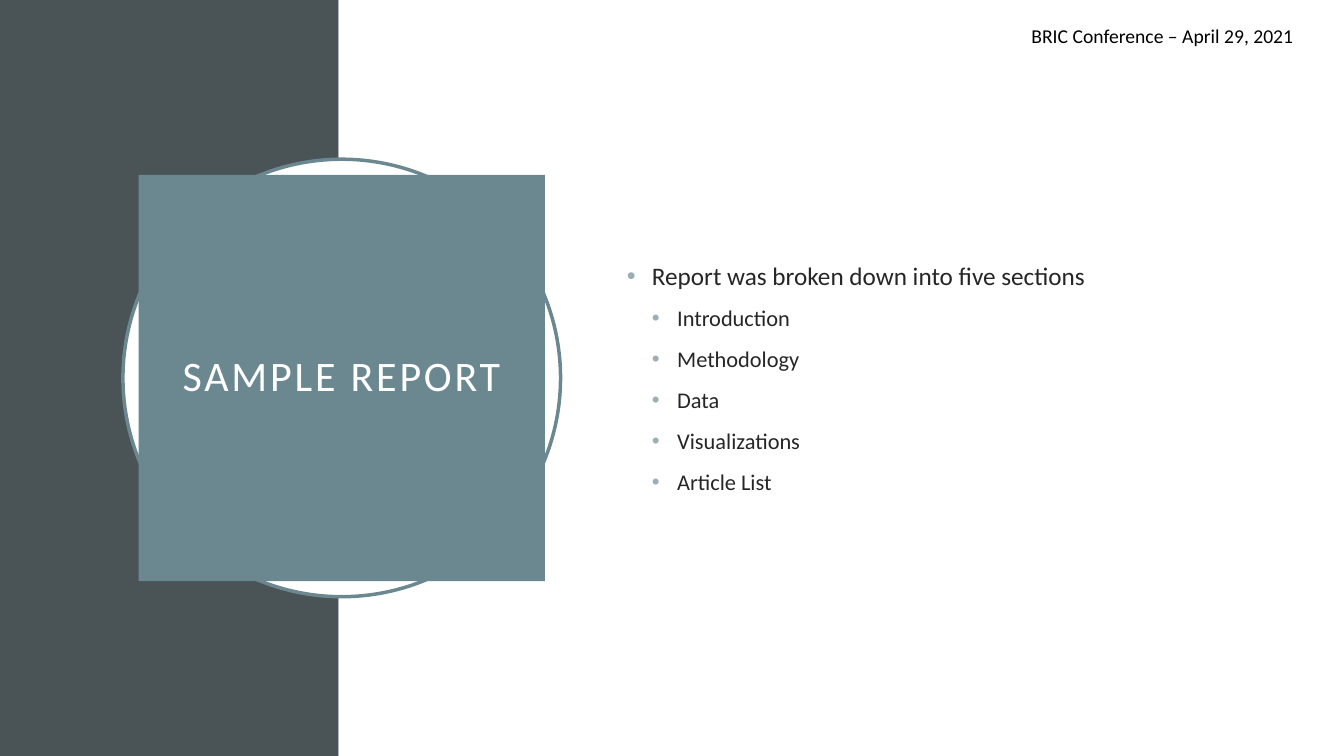
import pptx
import pptx.dml.color
import pptx.enum.shapes
import pptx.enum.text
import pptx.oxml
import pptx.oxml.ns
import pptx.util

RGBColor = pptx.dml.color.RGBColor
Shape = pptx.enum.shapes.MSO_SHAPE
Align = pptx.enum.text.PP_ALIGN
Anchor = pptx.enum.text.MSO_ANCHOR
Inches = pptx.util.Inches
Pt = pptx.util.Pt

CHARCOAL = RGBColor(0x4A, 0x53, 0x56)
TEAL = RGBColor(0x6B, 0x88, 0x91)
WHITE = RGBColor(0xFF, 0xFF, 0xFF)
BLACK = RGBColor(0x00, 0x00, 0x00)
INK = RGBColor(0x26, 0x26, 0x26)
BULLET = RGBColor(0x9B, 0xAF, 0xB5)

FONT = "Calibri"
WIDTH, HEIGHT = Inches(13.33), Inches(7.5)
PANEL_SHARE = 25.2  # dark panel, percent of the slide's width
SECTIONS = ["Introduction", "Methodology", "Data", "Visualizations", "Article List"]


def across(percent):
    return int(WIDTH * percent / 100)


def down(percent):
    return int(HEIGHT * percent / 100)


def area(left, top, width, height):
    """Turn percentages of the slide into a position and a size."""
    return across(left), down(top), across(width), down(height)


def centred_square(middle, side):
    """Square centred vertically; its side is a share of the slide's height."""
    length = down(side)
    return across(middle) - length // 2, (HEIGHT - length) // 2, length, length


def add_block(page, kind, place, fill, line=None):
    block = page.shapes.add_shape(kind, *place)
    block.shadow.inherit = False
    block.fill.solid()
    block.fill.fore_color.rgb = fill
    if line is None:
        block.line.fill.background()
    else:
        block.line.color.rgb = line
        block.line.width = Pt(2.5)
    return block


def add_span(para, text, size, color):
    span = para.add_run()
    span.text = text
    span.font.name = FONT
    span.font.size = Pt(size)
    span.font.color.rgb = color
    return span


def add_text_box(page, place, wrap, anchor):
    box = page.shapes.add_textbox(*place)
    box.text_frame.word_wrap = wrap
    box.text_frame.vertical_anchor = anchor
    return box.text_frame


def set_bullet(para, level):
    """Hanging bullet, one quarter inch deeper for each level."""
    para.level = level
    para.space_before = Pt(10)
    properties = para._p.get_or_add_pPr()
    properties.set("marL", str(Inches(0.25 * (level + 1))))
    properties.set("indent", str(-Inches(0.25)))
    namespace = pptx.oxml.ns.nsdecls("a")
    for markup in (
        f'<a:buClr {namespace}><a:srgbClr val="{BULLET}"/></a:buClr>',
        f'<a:buFont {namespace} typeface="Arial"/>',
        f'<a:buChar {namespace} char="•"/>',
    ):
        properties.append(pptx.oxml.parse_xml(markup))


def add_title(page, text):
    add_block(page, Shape.OVAL, centred_square(25.43, 57.87), WHITE, TEAL)
    frame = add_block(page, Shape.RECTANGLE, centred_square(25.43, 53.73), TEAL).text_frame
    frame.word_wrap = True
    frame.vertical_anchor = Anchor.MIDDLE
    frame.margin_left = frame.margin_right = Inches(0.2)
    frame.margin_top = frame.margin_bottom = Inches(0.2)
    para = frame.paragraphs[0]
    para.alignment = Align.CENTER
    para.line_spacing = 0.9
    span = add_span(para, text, 30, WHITE)
    span.font._element.set("spc", "200")


def add_outline(page, heading, entries):
    frame = add_text_box(page, area(45.9, 20.4, 43.66, 59.07), True, Anchor.MIDDLE)
    rows = [(heading, 0, 18)] + [(entry, 1, 16) for entry in entries]
    for index, (text, level, size) in enumerate(rows):
        para = frame.add_paragraph() if index else frame.paragraphs[0]
        set_bullet(para, level)
        add_span(para, text, size, INK)


def main():
    deck = pptx.Presentation()
    deck.slide_width, deck.slide_height = WIDTH, HEIGHT
    page = deck.slides.add_slide(deck.slide_layouts[6])

    # Background panels
    add_block(page, Shape.RECTANGLE, area(0, 0, PANEL_SHARE, 100), CHARCOAL)
    add_block(page, Shape.RECTANGLE, area(PANEL_SHARE, 0, 100 - PANEL_SHARE, 100), WHITE)

    # Title and list of sections
    add_title(page, "SAMPLE REPORT")
    add_outline(page, "Report was broken down into five sections", SECTIONS)

    # Event label
    label = add_text_box(page, area(76, 2.53, 21.83, 4.53), False, Anchor.TOP)
    add_span(label.paragraphs[0], "BRIC Conference – April 29, 2021", 14, BLACK)

    deck.save("out.pptx")


if __name__ == "__main__":
    main()
